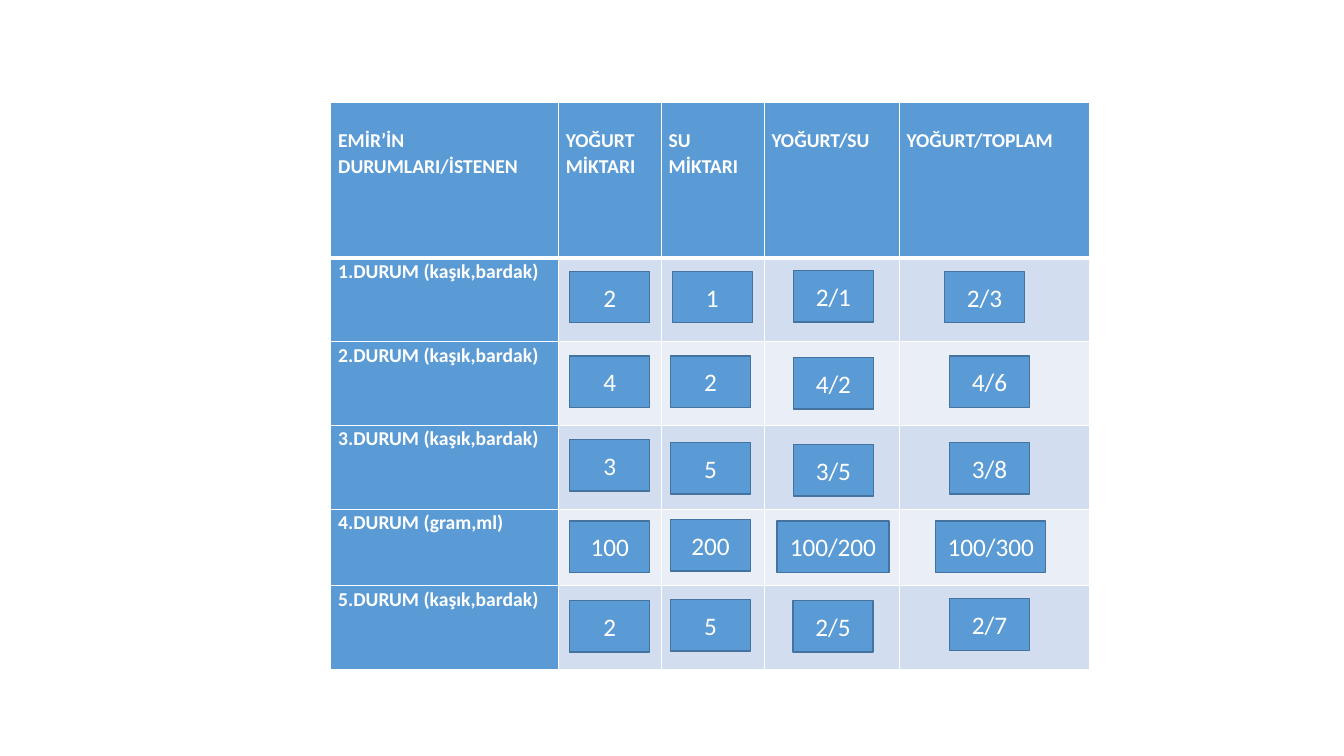
from lxml import etree
from pptx import Presentation
from pptx.dml.color import RGBColor as RGB
from pptx.enum.shapes import MSO_SHAPE as SHAPE
from pptx.enum.text import MSO_ANCHOR as ANCHOR, PP_ALIGN as ALIGN
from pptx.oxml.ns import qn
from pptx.util import Pt

HUES = {"blue": "5B9BD5", "edge": "43739E", "odd": "D2DEEF",
        "even": "EAEFF7", "white": "FFFFFF"}


def hue(name):
    return RGB.from_string(HUES[name])


def add_edge(cell, side, width):
    """Draw a white border on one side (L, R, T or B) of a cell."""
    line = etree.SubElement(cell._tc.get_or_add_tcPr(), qn("a:ln" + side), w=str(Pt(width)))
    fill = etree.SubElement(line, qn("a:solidFill"))
    etree.SubElement(fill, qn("a:srgbClr"), val=HUES["white"])


deck = Presentation()
deck.slide_width, deck.slide_height = Pt(960), Pt(540)
slide = deck.slides.add_slide(deck.slide_layouts[6])

# Table
heads = ["EMİR’İN DURUMLARI/İSTENEN", "YOĞURT MİKTARI", "SU MİKTARI",
         "YOĞURT/SU", "YOĞURT/TOPLAM"]
units = ["kaşık,bardak"] * 3 + ["gram,ml", "kaşık,bardak"]
cases = [f"{n}.DURUM ({unit})" for n, unit in enumerate(units, 1)]
widths = [162.6, 73.5, 73.5, 96.5, 136.2]
heights = [111.6, 59.8, 59.8, 59.8, 54.7, 59.8]

table = slide.shapes.add_table(len(heights), len(widths), Pt(236.3), Pt(72.8),
                               Pt(sum(widths)), Pt(sum(heights))).table
for col, width in zip(table.columns, widths):
    col.width = Pt(width)
for row, height in zip(table.rows, heights):
    row.height = Pt(height)

for r in range(len(heights)):
    for c in range(len(widths)):
        cell = table.cell(r, c)
        cell.margin_left = cell.margin_right = Pt(5.3)
        cell.margin_top = Pt(0 if r else 18.3)
        cell.margin_bottom = 0
        for side in "LRTB":
            heavy = (r == 0 and side == "B") or (r == 1 and side == "T")
            add_edge(cell, side, 3 if heavy else 1)
        label = r == 0 or c == 0
        cell.fill.solid()
        cell.fill.fore_color.rgb = hue("blue" if label else "odd" if r % 2 else "even")
        if label:
            cell.text = cases[r - 1] if r else heads[c]
            para = cell.text_frame.paragraphs[0]
            para.line_spacing = 1.07
            font = para.font
            font.name, font.size, font.bold = "Calibri", Pt(14), True
            font.color.rgb = hue("white")

# Answer boxes: text, left, top, width, one list per table column
wide = 57.2
answers = [
    [("2", 407, 193.8, wide), ("4", 407, 254.2, wide), ("3", 407, 314, wide),
     ("100", 407, 372.2, wide), ("2", 407, 429.1, wide)],
    [("1", 480.2, 193.8, wide), ("2", 479, 254.2, wide), ("5", 479, 316.2, wide),
     ("200", 479, 371, wide), ("5", 479, 428.4, wide)],
    [("2/1", 566.7, 193.2, wide), ("4/2", 566.7, 255.5, wide), ("3/5", 566.7, 317.5, wide),
     ("100/200", 555, 372.2, 80), ("2/5", 566.4, 429.1, wide)],
    [("2/3", 674.6, 193.8, wide), ("4/6", 678.2, 254.2, wide), ("3/8", 678.2, 316.2, wide),
     ("100/300", 668.4, 372.2, 78.6), ("2/7", 678.2, 427.7, wide)],
]
for group in answers:
    for text, left, top, width in group:
        box = slide.shapes.add_shape(SHAPE.RECTANGLE, Pt(left), Pt(top), Pt(width), Pt(36.8))
        box.shadow.inherit = False
        box.fill.solid()
        box.fill.fore_color.rgb = hue("blue")
        box.line.color.rgb = hue("edge")
        box.line.width = Pt(1)
        frame = box.text_frame
        frame.text = text
        frame.vertical_anchor = ANCHOR.MIDDLE
        para = frame.paragraphs[0]
        para.alignment = ALIGN.CENTER
        para.font.name, para.font.size = "Calibri", Pt(18)
        para.font.color.rgb = hue("white")

deck.save("out.pptx")
